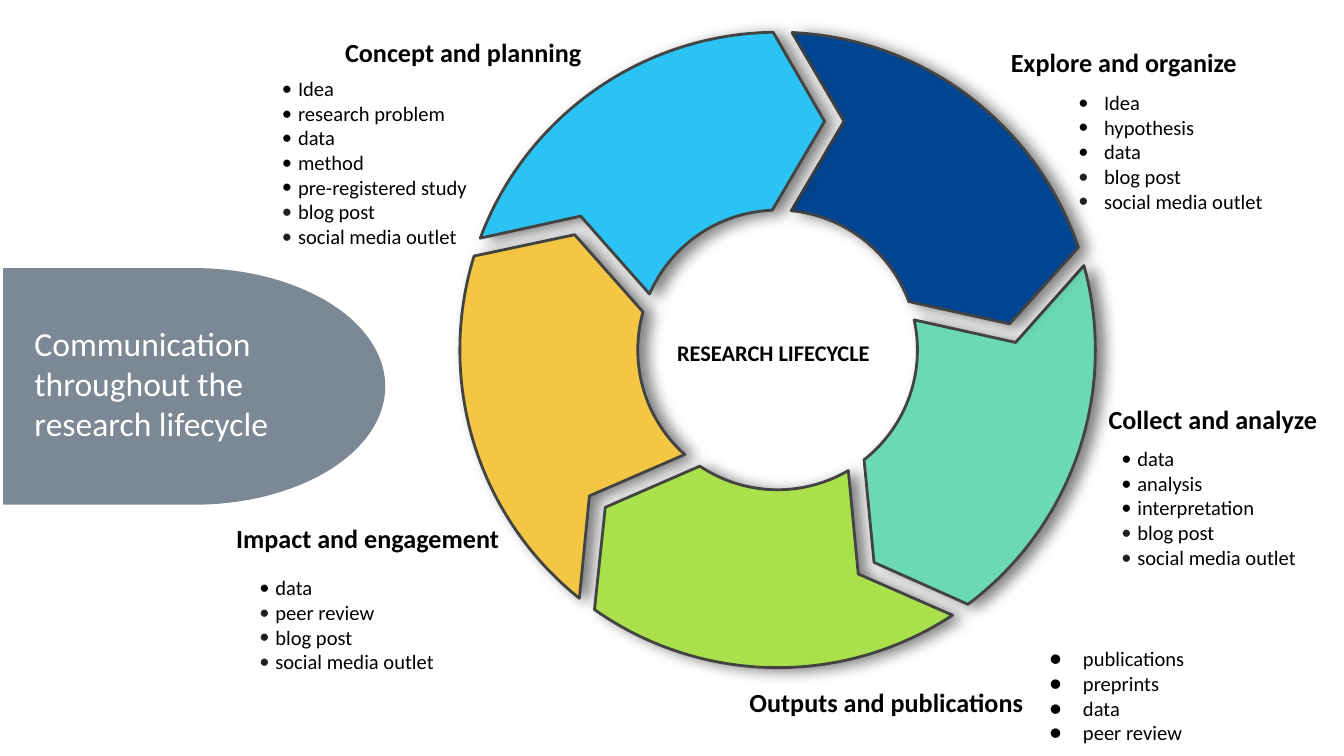
import math

from lxml import etree
from pptx import Presentation
from pptx.dml.color import RGBColor
from pptx.enum.shapes import MSO_SHAPE
from pptx.enum.text import MSO_ANCHOR, MSO_AUTO_SIZE, PP_ALIGN
from pptx.oxml.ns import qn
from pptx.util import Pt

DELAY = MSO_SHAPE.FLOWCHART_DELAY
TOP, MIDDLE = MSO_ANCHOR.TOP, MSO_ANCHOR.MIDDLE
LEFT, CENTER, RIGHT = PP_ALIGN.LEFT, PP_ALIGN.CENTER, PP_ALIGN.RIGHT
FIT, FIXED = MSO_AUTO_SIZE.SHAPE_TO_FIT_TEXT, MSO_AUTO_SIZE.NONE

FONT = "Calibri"
BLACK, CHARCOAL, WHITE = "000000", "1E2124", "FFFFFF"
SLATE, OUTLINE = "7C8894", "434343"

# Clockwise from the top, then the order in which they overlap
SEGMENT_COLORS = ["004591", "6BD8B6", "A9E04B", "F3C744", "2AC3F3"]
STACKING = [3, 2, 1, 0, 4]

# Heading, alignment, heading box, list box offset and size, list format, items
STAGES = [
    ("Impact and engagement", RIGHT, (114.8, 270, 159.8, 33.1), (17, 31, 109.4, 67.7),
     dict(margin=8.6, charcoal_from=1),
     ["data", "peer review", "blog post", "social media outlet"]),
    ("Outputs and publications", LEFT, (394.4, 357.8, 172, 29.5), (160.7, -18.7, 120.2, 67.7),
     dict(margin=18, hanging=18.7, bullet="●", before=0),
     ["publications", "preprints", "data", "peer review"]),
    ("Explore and organize", LEFT, (534.4, 15.1, 137.5, 33.1), (36.3, 25.9, 120.2, 81.4),
     dict(margin=13.7, charcoal_from=3),
     ["Idea", "hypothesis", "data", "blog post", "social media outlet"]),
    ("Collect and analyze", LEFT, (586.8, 206.6, 137.5, 33.1), (6.8, 25.2, 123.8, 81.4),
     dict(margin=8.6, charcoal_from=3),
     ["data", "analysis", "interpretation", "blog post", "social media outlet"]),
    ("Concept and planning", RIGHT, (161.7, 9.8, 157, 33.1), (-17.7, 23.7, 120.2, 108),
     dict(margin=8.6, charcoal_from=5),
     ["Idea", "research problem", "data", "method", "pre-registered study",
      "blog post", "social media outlet"]),
]


def color(hex_value):
    return RGBColor.from_string(hex_value)


def paint(shape, fill, line, width):
    shape.shadow.inherit = False
    shape.fill.solid()
    shape.fill.fore_color.rgb = color(fill)
    shape.line.color.rgb = color(line)
    shape.line.width = Pt(width)


def add_shadow(shape):
    """Soft shadow falling to the right."""
    effects = shape._element.spPr.find(qn("a:effectLst"))
    shadow = etree.SubElement(effects, qn("a:outerShdw"), blurRad=str(Pt(7.9)),
                              dist=str(Pt(4.5)), dir=str(15 * 60000),
                              algn="bl", rotWithShape="0")
    shade = etree.SubElement(shadow, qn("a:srgbClr"), val=BLACK)
    etree.SubElement(shade, qn("a:alpha"), val="50000")


def add_text(slide, box, text, size=14, ink=BLACK, bold=False, align=LEFT,
             anchor=TOP, spacing=None, autosize=FIXED):
    """Place a text box; each line of the text becomes a paragraph."""
    shape = slide.shapes.add_textbox(*map(Pt, box))
    frame = shape.text_frame
    frame.word_wrap = True
    frame.auto_size = autosize
    frame.vertical_anchor = anchor
    frame.margin_left = frame.margin_right = Pt(7.2)
    frame.margin_top = frame.margin_bottom = Pt(7.2)
    frame.text = text
    for paragraph in frame.paragraphs:
        paragraph.alignment = align
        if spacing:
            paragraph.line_spacing = spacing
        font = paragraph.runs[0].font
        font.name, font.size, font.bold = FONT, Pt(size), bold
        font.color.rgb = color(ink)
    return shape


def add_list(slide, box, items, margin, hanging=14.4, bullet="•", before=7.5,
             charcoal_from=None):
    shape = add_text(slide, box, "\n".join(items), size=11, autosize=FIT)
    paragraphs = shape.text_frame.paragraphs
    if before:
        paragraphs[0].space_before = Pt(before)
    for index, paragraph in enumerate(paragraphs):
        properties = paragraph._p.get_or_add_pPr()
        properties.set("marL", str(Pt(margin)))
        properties.set("indent", str(-Pt(hanging)))
        is_charcoal = charcoal_from is not None and index >= charcoal_from
        bullet_color = etree.SubElement(properties, qn("a:buClr"))
        etree.SubElement(bullet_color, qn("a:srgbClr"), val=CHARCOAL if is_charcoal else BLACK)
        etree.SubElement(properties, qn("a:buFont"), typeface=FONT)
        etree.SubElement(properties, qn("a:buChar"), char=bullet)


def add_banner(slide, box):
    """Title on a rounded tab at the left edge."""
    left, top, width, height = box
    tab = slide.shapes.add_shape(DELAY, *map(Pt, box))
    paint(tab, SLATE, SLATE, 0.75)
    add_text(slide, (left + 9.4, top + 21.6, width - 35.3, height - 46),
             "Communication throughout the research lifecycle",
             size=18, ink=WHITE, autosize=FIT)


def bend(shape, curves):
    """Turn straight path steps into Bézier curves; curves maps step to control points."""
    steps = shape._element.spPr.findall(".//" + qn("a:lnTo"))
    for index, controls in curves.items():
        step = steps[index]
        step.tag_name = qn("a:cubicBezTo")
        curve = etree.Element(qn("a:cubicBezTo"))
        for x, y in controls:
            etree.SubElement(curve, qn("a:pt"), x=str(x - shape.left), y=str(y - shape.top))
        curve.append(step[0])
        step.getparent().replace(step, curve)


def add_ring(slide, box):
    """Five equal arrow segments around a centre label."""
    left, top, diameter, _ = box
    radius = diameter / 2
    center_x, center_y = left + radius, top + radius
    inner, middle = radius * 0.44, radius * 0.742
    turn_step = 360 / len(SEGMENT_COLORS)

    def point(distance, degrees):
        angle = math.radians(degrees)
        return (Pt(center_x + distance * math.sin(angle)),
                Pt(center_y - distance * math.cos(angle)))

    def arc(distance, start, end):
        """Curves (controls, end point), split where the arc crosses an axis."""
        low, high = sorted((start, end))
        stops = [low] + [axis for axis in (90, 180, 270) if low < axis < high] + [high]
        if start > end:
            stops.reverse()
        curves = []
        for a, b in zip(stops, stops[1:]):
            lean = math.atan(4 / 3 * math.tan(math.radians(b - a) / 4))
            reach = distance / math.cos(lean)
            controls = [point(reach, a + math.degrees(lean)),
                        point(reach, b - math.degrees(lean))]
            curves.append((controls, point(distance, b)))
        return curves

    for index in STACKING:
        turn = index * turn_step
        steps = (arc(radius, turn + 2.6, turn + 71.2)
                 + [(None, point(middle * 0.99, turn + 83.6)),
                    (None, point(inner, turn + 69.8))]
                 + arc(inner, turn + 69.8, turn + 5.6)
                 + [(None, point(middle * 1.01, turn + 16.2))])
        builder = slide.shapes.build_freeform(*point(radius, turn + 2.6))
        builder.add_line_segments([end for _, end in steps], close=True)
        segment = builder.convert_to_shape()
        bend(segment, {i: controls for i, (controls, _) in enumerate(steps) if controls})
        paint(segment, SEGMENT_COLORS[index], OUTLINE, 1.5)
        add_shadow(segment)

    add_text(slide, (center_x - 66.7, center_y - 34.1, 128.9, 68.4), "RESEARCH LIFECYCLE",
             size=12, bold=True, align=CENTER, anchor=MIDDLE, spacing=1.15)


def add_stage(slide, box, heading, align, list_place, list_format, items):
    """Heading with its list placed relative to it."""
    add_text(slide, box, heading, bold=True, align=align, spacing=1.15)
    offset_x, offset_y, width, height = list_place
    add_list(slide, (box[0] + offset_x, box[1] + offset_y, width, height), items, **list_format)


def main():
    presentation = Presentation()
    presentation.slide_width, presentation.slide_height = Pt(720), Pt(405)
    slide = presentation.slides.add_slide(presentation.slide_layouts[6])

    add_banner(slide, (2, 144, 204, 126))
    add_ring(slide, (246.4, 17.3, 340.4, 340.4))
    for heading, align, box, list_place, list_format, items in STAGES:
        add_stage(slide, box, heading, align, list_place, list_format, items)

    presentation.save("out.pptx")


if __name__ == "__main__":
    main()
